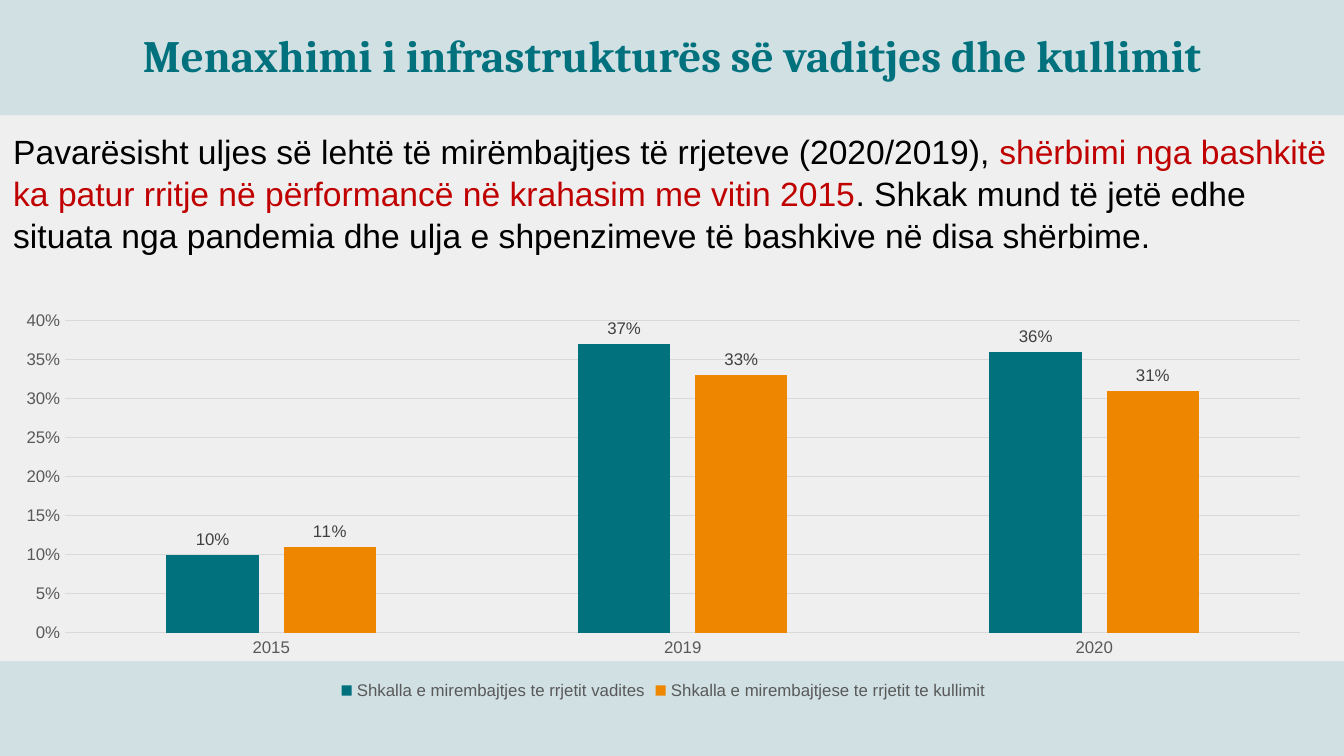
"""Build the slide on irrigation and drainage infrastructure management."""
from lxml import etree
from pptx import Presentation
from pptx.chart.data import CategoryChartData
from pptx.dml.color import RGBColor
from pptx.enum import chart as ch, shapes, text
from pptx.oxml import parse_xml
from pptx.oxml.ns import nsdecls, qn
from pptx.util import Cm, Pt

TEAL = RGBColor(0x00, 0x71, 0x7D)
ORANGE = RGBColor(0xEF, 0x86, 0x00)
RED = RGBColor(0xC0, 0x00, 0x00)
BLACK = RGBColor(0x00, 0x00, 0x00)
PALE_BLUE = RGBColor(0xD0, 0xE0, 0xE3)
PALE_GREY = RGBColor(0xEF, 0xEF, 0xEF)
GRID = RGBColor(0xD9, 0xD9, 0xD9)
AXIS_TEXT = RGBColor(0x59, 0x59, 0x59)
LABEL_TEXT = RGBColor(0x40, 0x40, 0x40)


def set_font(font, name, size, color, bold=False):
    font.name, font.size, font.bold = name, Pt(size), bold
    font.color.rgb = color


def place(sp, top, height, anchor):
    sp.left, sp.top, sp.width, sp.height = Cm(0), Cm(top), Cm(25.4), Cm(height)
    tf = sp.text_frame
    tf.word_wrap = True
    tf.auto_size = text.MSO_AUTO_SIZE.NONE
    tf.vertical_anchor = anchor
    tf.margin_left = tf.margin_right = tf.margin_top = tf.margin_bottom = Cm(0.25)
    return tf


prs = Presentation()
prs.slide_width, prs.slide_height = Cm(25.4), Cm(14.29)
s = prs.slides.add_slide(prs.slide_layouts[1])
s.background.fill.solid()
s.background.fill.fore_color.rgb = PALE_BLUE
title, body = s.placeholders

panel = s.shapes.add_shape(shapes.MSO_SHAPE.RECTANGLE, Cm(0), Cm(2.18), Cm(25.4), Cm(10.32))
panel.shadow.inherit = False
panel.fill.solid()
panel.fill.fore_color.rgb = PALE_GREY
panel.line.fill.background()
title.element.addprevious(panel.element)

tf = place(title, 0, 2.08, text.MSO_ANCHOR.MIDDLE)
tf.text = "Menaxhimi i infrastrukturës së vaditjes dhe kullimit"
p = tf.paragraphs[0]
p.alignment = text.PP_ALIGN.CENTER
set_font(p.runs[0].font, "Cambria", 24, TEAL, True)

tf = place(body, 2.18, 11.15, text.MSO_ANCHOR.TOP)
p = tf.paragraphs[0]
p.line_spacing = 1.05
p.space_before = Pt(0)
pPr = p._p.get_or_add_pPr()
pPr.set("marL", "0")
pPr.set("indent", "0")
etree.SubElement(pPr, qn("a:buNone"))
for words, color in (
    ("Pavarësisht uljes së lehtë të mirëmbajtjes të rrjeteve (2020/2019), ", BLACK),
    ("shërbimi nga bashkitë ka patur rritje në përformancë në krahasim me vitin 2015", RED),
    (". Shkak mund të jetë edhe situata nga pandemia dhe ulja e shpenzimeve "
     "të bashkive në disa shërbime.", BLACK),
):
    r = p.add_run()
    r.text = words
    set_font(r.font, "Arial", 18, color)

data = CategoryChartData(number_format="0%")
data.categories = ["2015", "2019", "2020"]
data.add_series("Shkalla e mirembajtjes te rrjetit vadites", (0.10, 0.37, 0.36))
data.add_series("Shkalla e mirembajtjese te rrjetit te kullimit", (0.11, 0.33, 0.31))
chart = s.shapes.add_chart(ch.XL_CHART_TYPE.COLUMN_CLUSTERED,
                           Cm(0), Cm(5.72), Cm(25.07), Cm(7.62), data).chart
set_font(chart.font, "Arial", 10, BLACK)
chart.has_title = False
chart.has_legend = True
chart.legend.position = ch.XL_LEGEND_POSITION.BOTTOM
chart.legend.include_in_layout = False
set_font(chart.legend.font, "Arial", 9, AXIS_TEXT)
chart.element.find(qn("c:chart")).addnext(
    parse_xml(f"<c:spPr {nsdecls('c', 'a')}><a:noFill/><a:ln><a:noFill/></a:ln></c:spPr>"))

for axis in (chart.category_axis, chart.value_axis):
    axis.major_tick_mark = axis.minor_tick_mark = ch.XL_TICK_MARK.NONE
    set_font(axis.tick_labels.font, "Arial", 9, AXIS_TEXT)
axis = chart.value_axis
axis.minimum_scale, axis.maximum_scale, axis.major_unit = 0, 0.4, 0.05
axis.tick_labels.number_format = "0%"
axis.tick_labels.number_format_is_linked = False
axis.format.line.fill.background()
for line in (chart.category_axis.format.line, axis.major_gridlines.format.line):
    line.color.rgb = GRID
    line.width = Pt(0.75)

plot = chart.plots[0]
plot.vary_by_categories = False
plot.gap_width, plot.overlap = 219, -27
for series, color in zip(plot.series, (TEAL, ORANGE)):
    series.format.fill.solid()
    series.format.fill.fore_color.rgb = color
    labels = series.data_labels
    labels.show_value = True
    labels.position = ch.XL_LABEL_POSITION.OUTSIDE_END
    set_font(labels.font, "Arial", 9, LABEL_TEXT)

prs.save("out.pptx")
